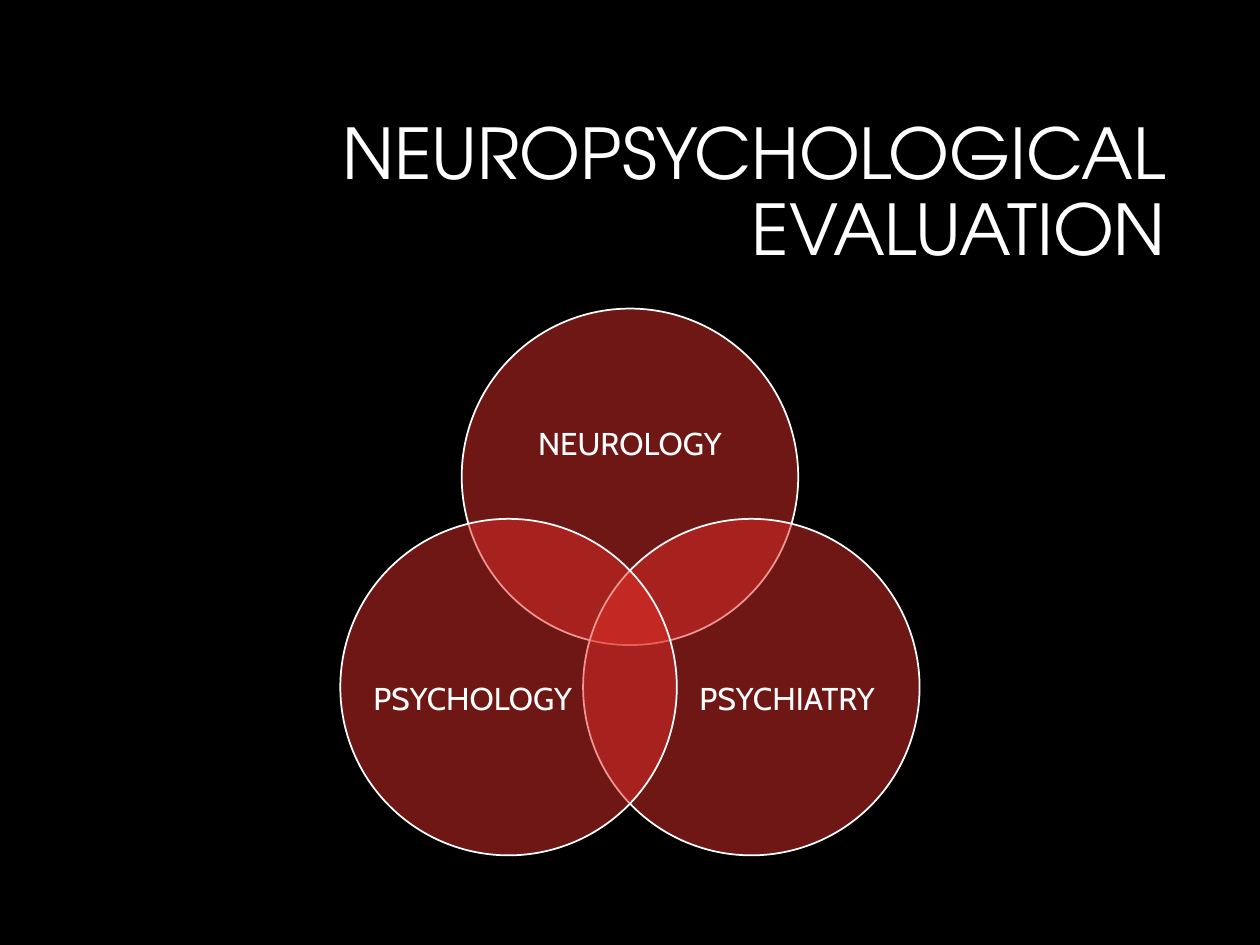
import math

import pptx
import pptx.dml.color
import pptx.enum.shapes
import pptx.enum.text
import pptx.util
from lxml import etree
from pptx.oxml.ns import qn

Pt = pptx.util.Pt
ALIGN = pptx.enum.text.PP_ALIGN
COLORS = {"back": "000000", "text": "FFFFFF", "disc": "DF2E28"}
SIZE = 192.3  # diameter of each disc
MID = (360, 352.6)  # centre of the diagram
REACH = 80.1  # from there to each disc's centre

# name, angle, label offset from disc centre, label size
DISCS = [
    ("NEUROLOGY", -90, (0, -19.2), (141, 86.4)),
    ("PSYCHIATRY", 30, (20.5, 6.4), (115.2, 105.8)),
    ("PSYCHOLOGY", 150, (-20.5, 6.4), (115.2, 105.8)),
]


def color(name):
    return pptx.dml.color.RGBColor.from_string(COLORS[name])


def add_text(slide, text, box, size, font, align=ALIGN.CENTER, inset=None, space=None):
    frame = slide.shapes.add_textbox(*map(Pt, box)).text_frame
    frame.word_wrap = True
    frame.vertical_anchor = pptx.enum.text.MSO_ANCHOR.MIDDLE
    if inset is not None:
        frame.margin_left = frame.margin_right = Pt(inset)
        frame.margin_top = frame.margin_bottom = Pt(inset)
    line = frame.paragraphs[0]
    line.alignment = align
    line.line_spacing = space
    run = line.add_run()
    run.text = text
    run.font.size = Pt(size)
    run.font.name = font
    run.font.color.rgb = color("text")


def box_at(x, y, wide, high):
    """Return left, top, width, height of a box centred on x, y."""
    return x - wide / 2, y - high / 2, wide, high


def add_disc(slide, x, y):
    """Add a half-transparent circle centred on x, y."""
    kind = pptx.enum.shapes.MSO_SHAPE.OVAL
    disc = slide.shapes.add_shape(kind, *map(Pt, box_at(x, y, SIZE, SIZE)))
    disc.shadow.inherit = False
    disc.fill.solid()
    disc.fill.fore_color.rgb = color("disc")
    tint = disc.fill._xPr.find(qn("a:solidFill"))[0]
    etree.SubElement(tint, qn("a:alpha"), val="50000")
    disc.line.color.rgb = color("text")
    disc.line.width = Pt(1)


def main():
    deck = pptx.Presentation()
    deck.slide_width, deck.slide_height = Pt(720), Pt(540)
    slide = deck.slides.add_slide(deck.slide_layouts[6])
    slide.background.fill.solid()
    slide.background.fill.fore_color.rgb = color("back")

    add_text(slide, "NEUROPSYCHOLOGICAL EVALUATION", (171.4, 60.5, 501.8, 101.5),
             40, "TeX Gyre Adventor", align=ALIGN.RIGHT, space=0.9)
    for name, angle, (dx, dy), area in DISCS:
        turn = math.radians(angle)
        x = MID[0] + REACH * math.cos(turn)
        y = MID[1] + REACH * math.sin(turn)
        add_disc(slide, x, y)
        add_text(slide, name, box_at(x + dx, y + dy, *area), 18, "Cabin", inset=0)
    deck.save("out.pptx")


if __name__ == "__main__":
    main()
